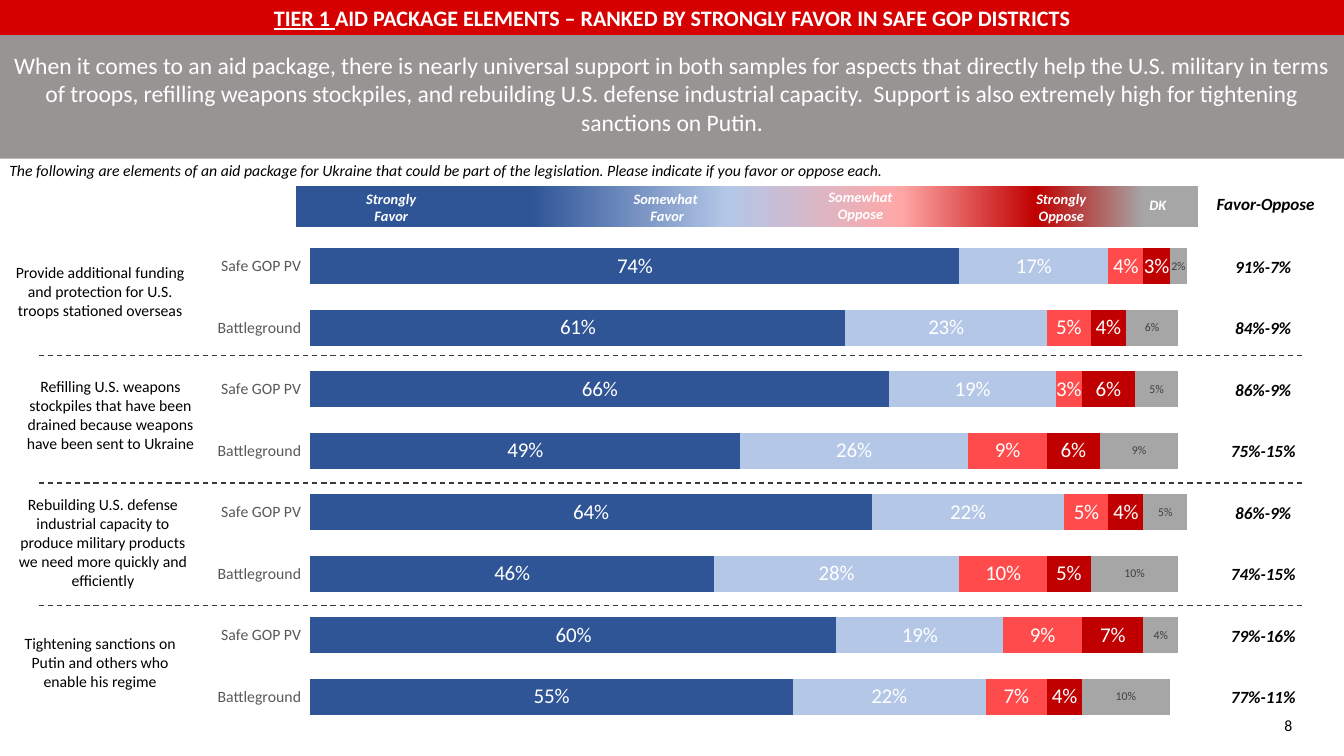
from lxml.etree import SubElement
from pptx import Presentation
from pptx.chart.data import CategoryChartData
from pptx.dml.color import RGBColor
from pptx.enum.chart import XL_CHART_TYPE, XL_LABEL_POSITION, XL_TICK_LABEL_POSITION, XL_TICK_MARK
from pptx.enum.dml import MSO_LINE
from pptx.enum.shapes import MSO_CONNECTOR, MSO_SHAPE
from pptx.enum.text import MSO_ANCHOR, MSO_AUTO_SIZE, PP_ALIGN
from pptx.oxml import parse_xml
from pptx.oxml.ns import nsdecls, qn
from pptx.util import Inches, Pt

FONT = "Calibri"
COLORS = {
    "banner": "989494", "title": "D60000", "white": "FFFFFF", "black": "000000",
    "divider": "3B3838", "axis": "595959", "dk_label": "404040",
    "strongly_favor": "2F5597", "somewhat_favor": "B4C7E7", "pale_oppose": "FFA7A7",
    "somewhat_oppose": "FF4B4B", "strongly_oppose": "C00000", "dk": "A6A6A6",
}
SLIDE_WIDTH, SLIDE_HEIGHT = 14.22, 8

TITLE_LEAD = "TIER 1 "
TITLE = "AID PACKAGE ELEMENTS – RANKED BY STRONGLY FAVOR IN SAFE GOP DISTRICTS"
TAKEAWAY = (
    "When it comes to an aid package, there is nearly universal support in both samples for "
    "aspects that directly help the U.S. military in terms of troops, refilling weapons "
    "stockpiles, and rebuilding U.S. defense industrial capacity.  Support is also extremely "
    "high for tightening sanctions on Putin."
)
QUESTION = ("The following are elements of an aid package for Ukraine that could be part of the "
            "legislation. Please indicate if you favor or oppose each.")
PAGE_NUMBER = "8"

# text, (left, top, width, height)
ELEMENTS = [
    ("Provide additional funding and protection for U.S. troops stationed overseas",
     (0, 2.73, 2.12, 0.71)),
    ("Refilling U.S. weapons stockpiles that have been drained because weapons have been "
     "sent to Ukraine", (0.03, 3.94, 2.28, 0.91)),
    ("Rebuilding U.S. defense industrial capacity to produce military products we need more "
     "quickly and efficiently", (0.03, 5.19, 2.12, 1.11)),
    ("Tightening sanctions on Putin and others who enable his regime",
     (0, 6.66, 2.12, 0.71)),
]
SCALE_LABELS = [
    ("Strongly\nFavor", (3.18, 1.96, 1.92, 0.49)),
    ("Somewhat \nFavor", (5.94, 1.96, 2.24, 0.49)),
    ("Somewhat Oppose", (8.44, 1.94, 1.33, 0.49)),
    ("Strongly Oppose", (10.7, 1.96, 1.06, 0.49)),
    ("DK", (11.79, 2.03, 0.92, 0.25)),
]
SCALE_STOPS = [(26, "strongly_favor"), (48, "somewhat_favor"), (67, "pale_oppose"),
               (82, "strongly_oppose"), (94, "dk")]
DIVIDERS = [3.76, 5.11, 6.41]

# sample, shares in answer order, favor-oppose; from top to bottom
ROWS = [
    ("Safe GOP PV", (0.74, 0.17, 0.04, 0.03, 0.02), "91%-7%"),
    ("Battleground", (0.61, 0.23, 0.05, 0.04, 0.06), "84%-9%"),
    ("Safe GOP PV", (0.66, 0.19, 0.03, 0.06, 0.05), "86%-9%"),
    ("Battleground", (0.49, 0.26, 0.09, 0.06, 0.09), "75%-15%"),
    ("Safe GOP PV", (0.64, 0.22, 0.05, 0.04, 0.05), "86%-9%"),
    ("Battleground", (0.46, 0.28, 0.10, 0.05, 0.10), "74%-15%"),
    ("Safe GOP PV", (0.60, 0.19, 0.09, 0.07, 0.04), "79%-16%"),
    ("Battleground", (0.55, 0.22, 0.07, 0.04, 0.10), "77%-11%"),
]
# series name, fill, label colour, label size
ANSWERS = [
    ("Series 1", "strongly_favor", "white", 16),
    ("Series 2", "somewhat_favor", "white", 16),
    ("Series 3", "somewhat_oppose", "white", 16),
    ("Series 4", "strongly_oppose", "white", 16),
    ("Series 5", "dk", "dk_label", 9),
]
CHART_BOX = (2.12, 2.24, 10.59, 5.76)
PLOT = {"x": 0.11, "y": 0.044, "w": 0.876, "h": 0.904}


def rgb(name):
    return RGBColor.from_string(COLORS[name])


def inches(box):
    return [Inches(length) for length in box]


def format_font(font, size, color, bold=False, italic=False):
    font.name, font.size, font.bold, font.italic = FONT, Pt(size), bold, italic
    font.color.rgb = rgb(color)


def write(frame, text, size=12, color="black", align=PP_ALIGN.CENTER, lead="", **style):
    """Fill a text frame, one paragraph a line, after an optional underlined lead."""
    frame.word_wrap = True
    frame.auto_size = MSO_AUTO_SIZE.NONE
    frame.vertical_anchor = MSO_ANCHOR.TOP
    for index, line in enumerate(text.split("\n")):
        paragraph = frame.add_paragraph() if index else frame.paragraphs[0]
        paragraph.alignment = align
        if lead and not index:
            opening = paragraph.add_run()
            opening.text = lead
            format_font(opening.font, size, color, **style)
            opening.font.underline = True
        run = paragraph.add_run()
        run.text = line
        format_font(run.font, size, color, **style)


def add_text(slide, box, text, **style):
    write(slide.shapes.add_textbox(*inches(box)).text_frame, text, **style)


def add_band(slide, box, color=None):
    band = slide.shapes.add_shape(MSO_SHAPE.RECTANGLE, *inches(box))
    band.shadow.inherit = False
    band.line.fill.background()
    if color:
        band.fill.solid()
        band.fill.fore_color.rgb = rgb(color)
    return band


def add_scale(slide):
    band = add_band(slide, (3.13, 1.97, 9.55, 0.43))
    band.fill.gradient()
    band.fill.gradient_angle = 0
    stops = next(band.element.iter(qn("a:gsLst")))
    for stop in list(stops):
        stops.remove(stop)
    for percent, color in SCALE_STOPS:
        stop = SubElement(stops, qn("a:gs"), pos=str(percent * 1000))
        SubElement(stop, qn("a:srgbClr"), val=COLORS[color])
    for label, box in SCALE_LABELS:
        add_text(slide, box, label, size=11, color="white", bold=True, italic=True)


def add_divider(slide, y):
    divider = slide.shapes.add_connector(
        MSO_CONNECTOR.STRAIGHT, *inches((0.41, y, 13.81, y)))
    divider.line.color.rgb = rgb("divider")
    divider.line.width = Pt(1)
    divider.line.dash_style = MSO_LINE.DASH
    SubElement(divider.element.spPr, qn("a:effectLst"))


def add_support_chart(slide):
    rows = ROWS[::-1]  # a bar chart stacks its categories upwards
    data = CategoryChartData(number_format="0%")
    data.categories = [sample for sample, _, _ in rows]
    for index, (name, *_) in enumerate(ANSWERS):
        data.add_series(name, [shares[index] for _, shares, _ in rows])
    chart = slide.shapes.add_chart(
        XL_CHART_TYPE.BAR_STACKED, *inches(CHART_BOX), data).chart
    chart.has_legend = chart.has_title = False
    format_font(chart.font, 10, "black")

    samples, shares = chart.category_axis, chart.value_axis
    samples.major_tick_mark = samples.minor_tick_mark = XL_TICK_MARK.NONE
    samples.tick_label_position = XL_TICK_LABEL_POSITION.LOW
    samples.format.line.fill.background()
    format_font(samples.tick_labels.font, 12, "axis")
    shares.minimum_scale, shares.maximum_scale = 0, 1
    shares.has_major_gridlines = shares.visible = False

    plot = chart.plots[0]
    plot.gap_width, plot.overlap, plot.vary_by_categories = 70, 100, False
    for series, (_, fill, label_color, label_size) in zip(plot.series, ANSWERS):
        series.format.fill.solid()
        series.format.fill.fore_color.rgb = rgb(fill)
        labels = series.data_labels
        labels.show_value = True
        labels.position = XL_LABEL_POSITION.CENTER
        labels.number_format, labels.number_format_is_linked = "0%", False
        format_font(labels.font, label_size, label_color)

    plot_area = next(chart.element.iter(qn("c:plotArea")))
    for layout in plot_area.findall(qn("c:layout")):
        plot_area.remove(layout)
    extents = "".join(f'<c:{key} val="{value}"/>' for key, value in PLOT.items())
    plot_area.insert(0, parse_xml(
        f'<c:layout {nsdecls("c")}><c:manualLayout><c:layoutTarget val="inner"/>'
        f'<c:xMode val="edge"/><c:yMode val="edge"/>{extents}</c:manualLayout></c:layout>'))


def add_scores(slide):
    """Put each favor-oppose score level with the middle of its bar."""
    _, chart_top, _, chart_height = CHART_BOX
    pitch = chart_height * PLOT["h"] / len(ROWS)
    first_middle = chart_top + chart_height * PLOT["y"] + pitch / 2
    style = {"size": 13, "bold": True, "italic": True}
    add_text(slide, (12.74, 2, 1.3, 0.32), "Favor-Oppose", **style)
    for index, (_, _, score) in enumerate(ROWS):
        add_text(slide, (12.86, first_middle + index * pitch - 0.16, 1.01, 0.32), score, **style)


def main():
    deck = Presentation()
    deck.slide_width, deck.slide_height = Inches(SLIDE_WIDTH), Inches(SLIDE_HEIGHT)
    slide = deck.slides.add_slide(deck.slide_layouts[5])

    add_band(slide, (0, 0, SLIDE_WIDTH, 1.68), "banner")
    add_band(slide, (0, 0, SLIDE_WIDTH, 0.37), "title")
    title = slide.shapes.title
    title.left, title.top, title.width, title.height = inches((0, 0, SLIDE_WIDTH, 0.39))
    write(title.text_frame, TITLE, lead=TITLE_LEAD, size=16.8, color="white", bold=True)
    title.element.getparent().append(title.element)  # bring in front of the bands

    add_text(slide, (0.05, 0.49, 14.12, 1.01), TAKEAWAY, size=18, color="white")
    add_text(slide, (0, 1.65, 11.52, 0.3), QUESTION, align=PP_ALIGN.LEFT, italic=True)
    add_support_chart(slide)
    add_scale(slide)
    for y in DIVIDERS:
        add_divider(slide, y)
    for element, box in ELEMENTS:
        add_text(slide, box, element)
    add_scores(slide)
    add_text(slide, (13.49, 7.53, 0.56, 0.3), PAGE_NUMBER, align=PP_ALIGN.LEFT)
    deck.save("out.pptx")


if __name__ == "__main__":
    main()
